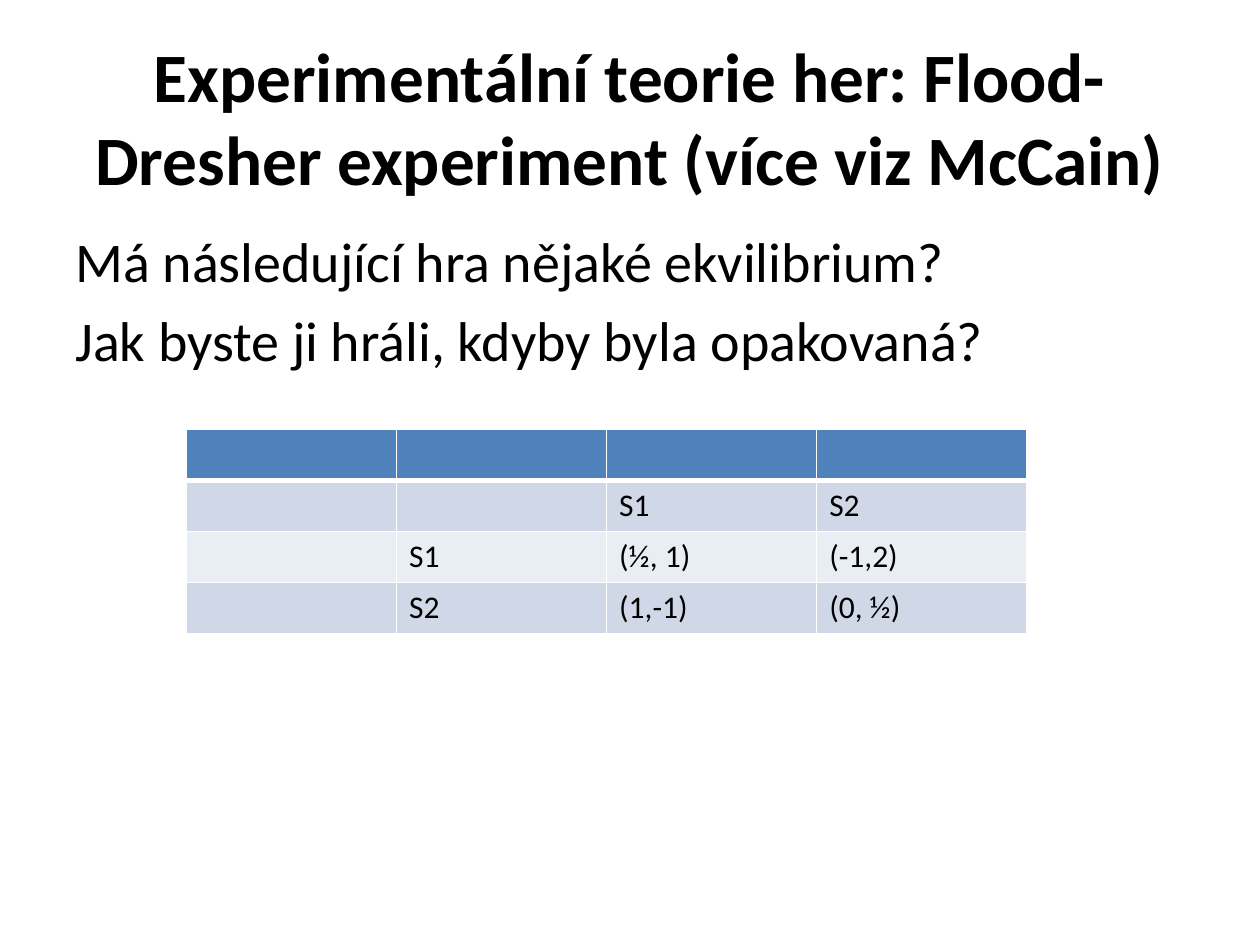
from dataclasses import dataclass

from lxml.etree import SubElement
from pptx import Presentation
from pptx.dml.color import RGBColor
from pptx.enum.text import MSO_ANCHOR as Anchor, PP_ALIGN as Align
from pptx.oxml.ns import qn
from pptx.util import Inches, Pt

COLORS = {"text": "000000", "header": "4F81BD", "dark_band": "D0D8E8",
          "light_band": "E9EDF4", "border": "FFFFFF"}
FONT = "Calibri"


@dataclass
class TextBlock:
    lines: list[str]
    box: tuple[float, float, float, float]
    size: float
    bold: bool = False
    align: Align = Align.LEFT
    anchor: Anchor = Anchor.TOP
    space_before: float = 0


@dataclass
class PayoffRow:
    labels: list[str]
    fill: str
    bottom_width: float = 1


TEXT_BLOCKS = [
    TextBlock(["Experimentální teorie her: Flood-Dresher experiment (více viz McCain)"],
              (0.5, 0.3, 9, 1.25), 39.6, True, Align.CENTER, Anchor.MIDDLE),
    TextBlock(["Má následující hra nějaké ekvilibrium?",
               "Jak byste ji hráli, kdyby byla opakovaná?"],
              (0.5, 1.75, 9, 4.95), 32, space_before=6.4),
]
PAYOFF_ROWS = [
    PayoffRow(["", "", "", ""], "header", 3),
    PayoffRow(["", "", "S1", "S2"], "dark_band"),
    PayoffRow(["", "S1", "(½, 1)", "(-1,2)"], "light_band"),
    PayoffRow(["", "S2", "(1,-1)", "(0, ½)"], "dark_band"),
]
TABLE_BOX = (1.48, 3.41, 6.67, 1.62)


def style_font(font, size: float, bold: bool = False) -> None:
    """Apply the slide's typeface and text colour."""
    for attribute, value in {"name": FONT, "size": Pt(size), "bold": bold}.items():
        setattr(font, attribute, value)
    font.color.rgb = RGBColor.from_string(COLORS["text"])


def draw_text(slide, block: TextBlock) -> None:
    """Draw a text block with one paragraph per line."""
    frame = slide.shapes.add_textbox(*map(Inches, block.box)).text_frame
    frame.word_wrap = True
    frame.vertical_anchor = block.anchor
    frame.text = "\n".join(block.lines)
    for paragraph in frame.paragraphs:
        paragraph.alignment = block.align
        paragraph.space_before = Pt(block.space_before)
        style_font(paragraph.runs[0].font, block.size, block.bold)


def draw_borders(cell, widths: dict[str, float]) -> None:
    """Outline a cell with a line width for each side."""
    properties = cell._tc.get_or_add_tcPr()
    for position, (side, width) in enumerate(widths.items()):
        line = SubElement(properties, qn(f"a:ln{side}"), w=str(Pt(width)))
        fill = SubElement(line, qn("a:solidFill"))
        SubElement(fill, qn("a:srgbClr"), val=COLORS["border"])
        properties.insert(position, line)


def draw_payoffs(slide, rows: list[PayoffRow]) -> None:
    """Draw the payoff matrix of the game."""
    frame = slide.shapes.add_table(len(rows), len(rows[0].labels), *map(Inches, TABLE_BOX))
    top_width = 1
    for row_index, row in enumerate(rows):
        for column_index, label in enumerate(row.labels):
            cell = frame.table.cell(row_index, column_index)
            cell.fill.solid()
            cell.fill.fore_color.rgb = RGBColor.from_string(COLORS[row.fill])
            cell.text = label
            style_font(cell.text_frame.paragraphs[0].font, 18)
            for run in cell.text_frame.paragraphs[0].runs:
                style_font(run.font, 18)
            draw_borders(cell, {"L": 1, "R": 1, "T": top_width, "B": row.bottom_width})
        top_width = row.bottom_width


def main() -> None:
    """Build the slide and save it."""
    deck = Presentation()
    deck.slide_width, deck.slide_height = Inches(10), Inches(7.5)
    slide = deck.slides.add_slide(deck.slide_layouts[6])
    for block in TEXT_BLOCKS:
        draw_text(slide, block)
    draw_payoffs(slide, PAYOFF_ROWS)
    deck.save("out.pptx")


if __name__ == "__main__":
    main()
